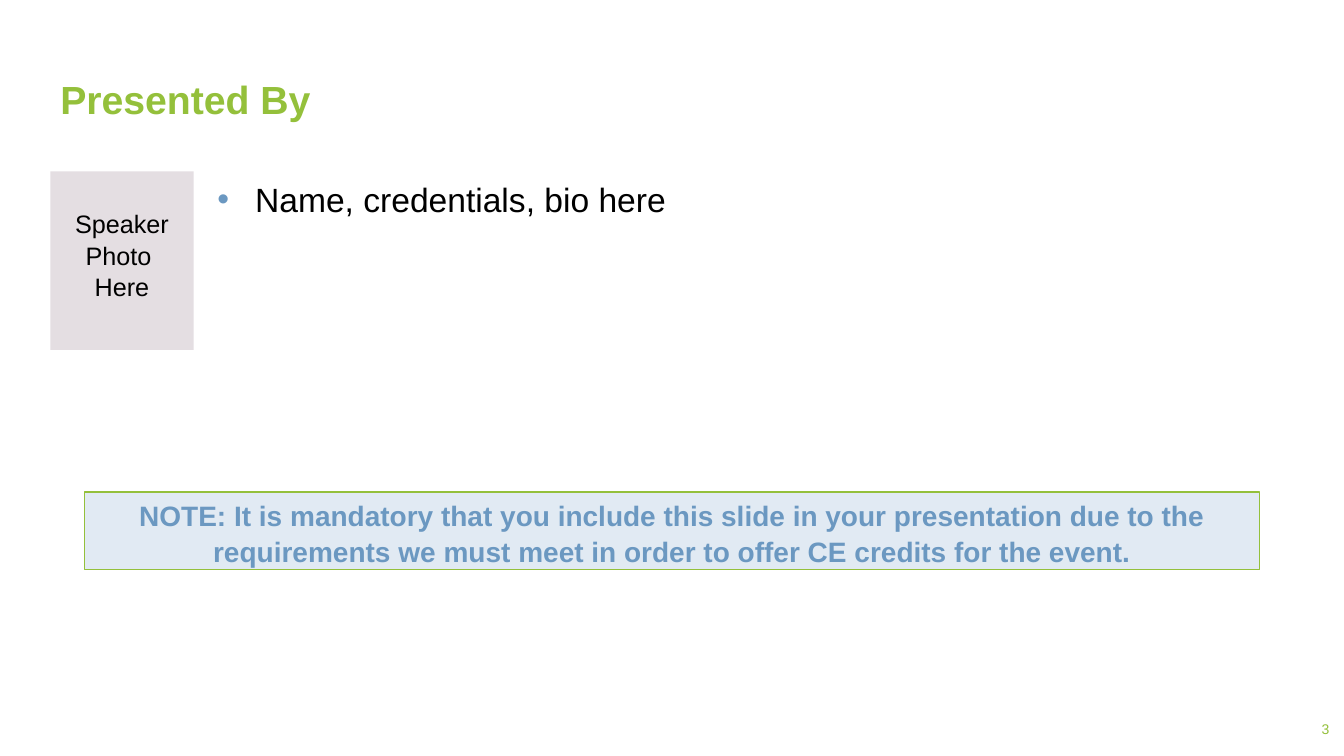
import pptx
import pptx.dml.color
import pptx.enum.shapes
import pptx.enum.text
import pptx.oxml
import pptx.oxml.ns
import pptx.util

Cm = pptx.util.Cm
Pt = pptx.util.Pt
ALIGN = pptx.enum.text.PP_ALIGN
ANCHOR = pptx.enum.text.MSO_ANCHOR

FONT = "Arial"
GREEN = "94C03B"
BLUE = "6B98C1"
PALE_BLUE = "E1EAF3"
PALE_MAUVE = "E4DEE2"
BLACK = "000000"
SIDE_INSET = 0.25
TOP_INSET = 0.13


def color(hex_string):
    return pptx.dml.color.RGBColor.from_string(hex_string)


def add_bullet(para, bullet_color, indent):
    """Give the paragraph a hanging round bullet."""
    properties = para._p.get_or_add_pPr()
    properties.set("marL", str(indent))
    properties.set("indent", str(-indent))
    namespace = pptx.oxml.ns.nsdecls("a")
    for markup in (
        f'<a:buClr {namespace}><a:srgbClr val="{bullet_color}"/></a:buClr>',
        f'<a:buFont {namespace} typeface="{FONT}"/>',
        f'<a:buChar {namespace} char="•"/>',
    ):
        properties.append(pptx.oxml.parse_xml(markup))


def write_text(box, text, size, text_color=BLACK, bold=False, align=ALIGN.LEFT,
               anchor=ANCHOR.TOP, side=SIDE_INSET, top=TOP_INSET,
               line_spacing=1.05, bullet_color=None):
    """Fill a box with one paragraph per line of text; insets are in cm."""
    frame = box.text_frame
    frame.word_wrap = True
    frame.vertical_anchor = anchor
    frame.margin_left = frame.margin_right = Cm(side)
    frame.margin_top = Cm(top)
    frame.margin_bottom = Cm(min(top, TOP_INSET))
    for index, line in enumerate(text.split("\n")):
        para = frame.paragraphs[0] if index == 0 else frame.add_paragraph()
        para.alignment = align
        para.line_spacing = line_spacing
        if bullet_color:
            para.space_after = Pt(6)
            add_bullet(para, bullet_color, Cm(0.95))
        span = para.add_run()
        span.text = line
        span.font.name = FONT
        span.font.size = Pt(size)
        span.font.bold = bold
        span.font.color.rgb = color(text_color)


def add_text(page, left, top, width, height):
    return page.shapes.add_textbox(Cm(left), Cm(top), Cm(width), Cm(height))


def add_panel(page, left, top, width, height, fill, line=None):
    panel = page.shapes.add_shape(
        pptx.enum.shapes.MSO_SHAPE.RECTANGLE,
        Cm(left), Cm(top), Cm(width), Cm(height))
    panel.shadow.inherit = False
    panel.fill.solid()
    panel.fill.fore_color.rgb = color(fill)
    if line:
        panel.line.color.rgb = color(line)
        panel.line.width = Pt(1)
    else:
        panel.line.fill.background()
    return panel


def main():
    deck = pptx.Presentation()
    deck.slide_width = Cm(33.87)
    deck.slide_height = Cm(19.05)
    page = deck.slides.add_slide(deck.slide_layouts[6])

    page_number = add_text(page, 31.98, 18.16, 1.52, 0.43)
    write_text(page_number, "3", 10, text_color=GREEN, align=ALIGN.RIGHT,
               side=0, top=0, line_spacing=1)

    biography = add_text(page, 5.23, 4.32, 27.3, 13.82)
    write_text(biography, "Name, credentials, bio here", 24, bullet_color=BLUE)

    note = add_panel(page, 2.13, 12.4, 29.62, 1.96, PALE_BLUE, line=GREEN)
    write_text(note, "NOTE: It is mandatory that you include this slide in your "
               "presentation due to the requirements we must meet in order to "
               "offer CE credits for the event.",
               20, text_color=BLUE, bold=True, align=ALIGN.CENTER)

    title = add_text(page, 1.27, 1.4, 27.94, 2.13)
    write_text(title, "Presented By", 28, text_color=GREEN, bold=True,
               anchor=ANCHOR.MIDDLE)

    photo = add_panel(page, 1.27, 4.32, 3.61, 4.5, PALE_MAUVE)
    write_text(photo, "Speaker Photo \nHere", 18, align=ALIGN.CENTER, top=0.89)

    deck.save("out.pptx")


if __name__ == "__main__":
    main()
